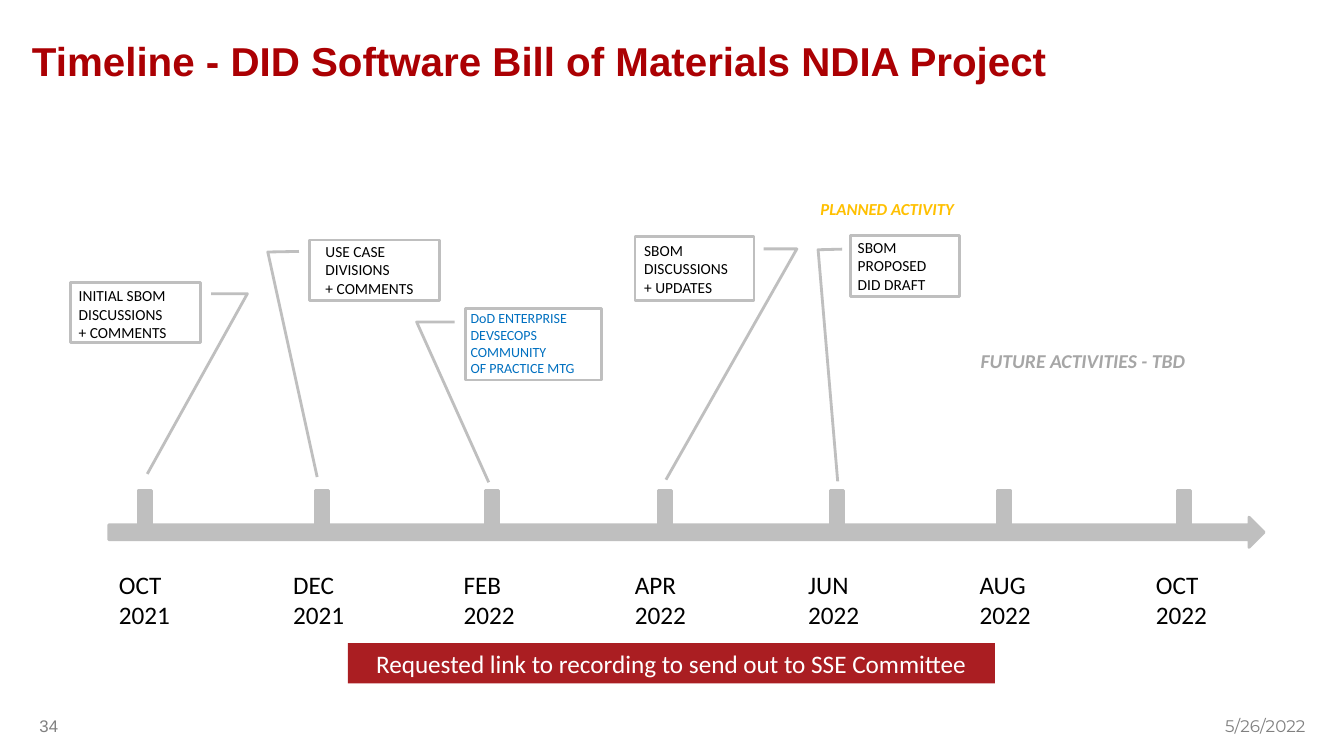
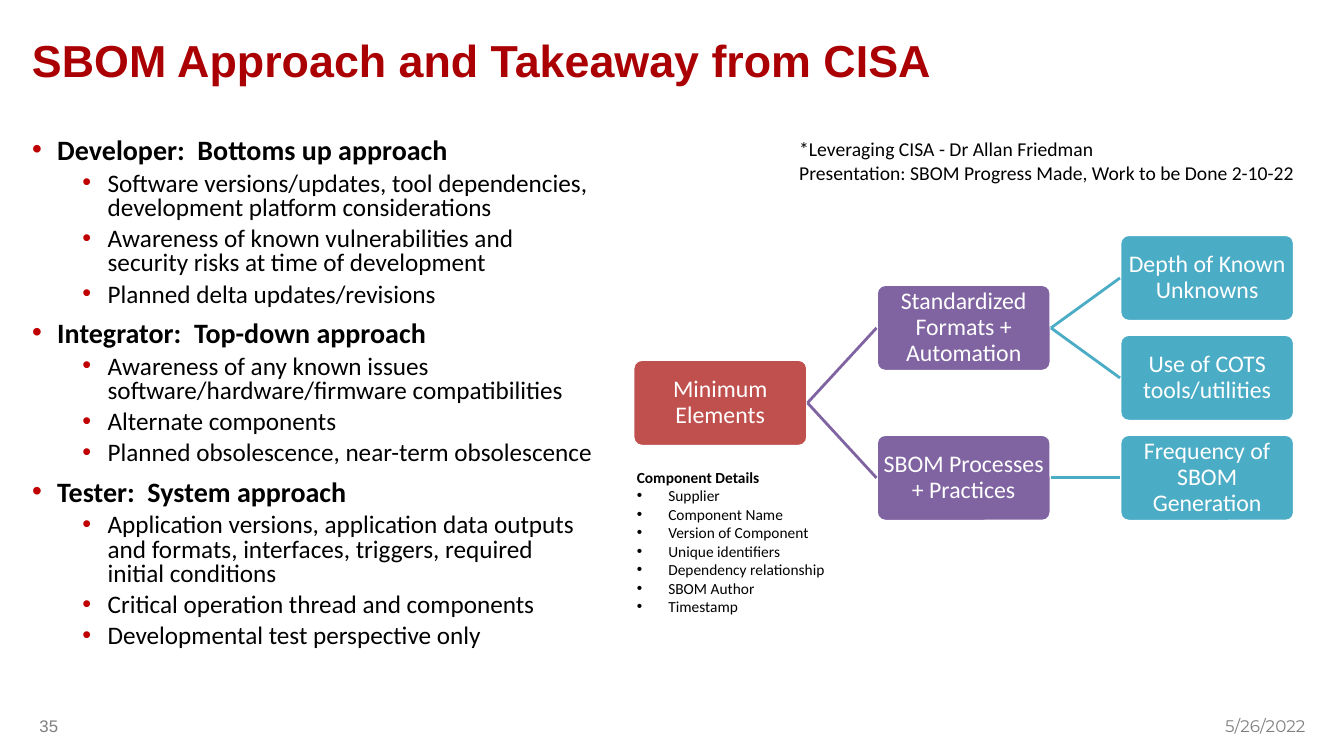
from dataclasses import dataclass, replace

from lxml import etree
from pptx import Presentation
from pptx.dml.color import RGBColor
from pptx.enum.shapes import MSO_CONNECTOR, MSO_SHAPE
from pptx.enum.text import MSO_ANCHOR, PP_ALIGN
from pptx.oxml.ns import qn
from pptx.util import Pt

LEFT, CENTER, RIGHT = PP_ALIGN.LEFT, PP_ALIGN.CENTER, PP_ALIGN.RIGHT
TOP, MIDDLE = MSO_ANCHOR.TOP, MSO_ANCHOR.MIDDLE
RECTANGLE, ROUNDED = MSO_SHAPE.RECTANGLE, MSO_SHAPE.ROUNDED_RECTANGLE
ARROW, CALLOUT = MSO_SHAPE.RIGHT_ARROW, MSO_SHAPE.LINE_CALLOUT_2
STRAIGHT = MSO_CONNECTOR.STRAIGHT

BLACK, WHITE, GRAY = "000000", "FFFFFF", "BFBFBF"
BULLET_RED, RED, PURPLE, TEAL = "C00000", "C0504D", "8064A2", "4BACC6"
DATE = "5/26/2022"
DEFAULT_INSETS = (7.2, 3.6, 7.2, 3.6)


@dataclass(frozen=True)
class Style:
    size: float
    color: str = BLACK
    font: str = "Calibri"
    bold: bool = False
    italic: bool = False


TITLE = Style(32, "AB0003", "Arial", bold=True)
NUMBER = Style(12, "808080", "Arial")
DATE_STYLE = replace(NUMBER, font="Montserrat")
MONTH = Style(18)
BANNER = Style(18, WHITE)
NOTE = Style(11)
COMMUNITY = Style(10, "0070C0")
PLANNED = Style(12, "FFC000", bold=True, italic=True)
FUTURE = Style(14, "A6A6A6", bold=True, italic=True)
HEADING = Style(20, bold=True)
POINT = Style(18)
SOURCE = Style(14)
CARD = Style(17, WHITE)


@dataclass(frozen=True)
class Month:
    name: str
    year: str
    label_left: float
    tick_left: float


@dataclass(frozen=True)
class Callout:
    """A boxed note; leader holds y, x pairs as fractions of the box."""
    lines: list[str]
    box: tuple[float, float, float, float]
    leader: tuple[float, ...]
    inset: tuple[float, float]
    style: Style = NOTE


@dataclass(frozen=True)
class Node:
    text: str
    color: str
    children: tuple["Node", ...] = ()


MONTHS = [
    Month("OCT", "2021", 77.8, 98.6),
    Month("DEC", "2021", 202.3, 225.4),
    Month("FEB", "2022", 324, 347),
    Month("APR", "2022", 446.4, 470.2),
    Month("JUN", "2022", 570.2, 593.3),
    Month("AUG", "2022", 692.6, 712.8),
    Month("OCT", "2022", 818.6, 841),
]

CALLOUTS = [
    Callout(["INITIAL SBOM", "DISCUSSIONS", "+ COMMENTS"], (50.4, 201.6, 92.9, 43.2),
            (0.19, 1.08, 0.19, 1.36, 3.17, 0.59), (5.8, 3)),
    Callout(["USE CASE", "DIVISIONS", "+ COMMENTS"], (221, 171.4, 92.9, 43.2),
            (0.19, -0.08, 0.2, -0.32, 3.92, 0.06), (11.5, 1.5)),
    Callout(["DoD ENTERPRISE", "DEVSECOPS", "COMMUNITY", "OF PRACTICE MTG"],
            (332.6, 220.3, 97.2, 51.1),
            (0.19, -0.08, 0.19, -0.36, 2.43, 0.17), (3.6, 0.7), COMMUNITY),
    Callout(["SBOM", "DISCUSSIONS", "+ UPDATES"], (453.6, 169.2, 85, 45.4),
            (0.19, 1.08, 0.19, 1.36, 3.82, 0.26), (6.5, 3)),
    Callout(["SBOM", "PROPOSED", "DID DRAFT"], (607.7, 168.5, 77.8, 43.2),
            (0.22, -0.08, 0.23, -0.3, 4.06, -0.12), (5, 1.5)),
]

APPROACHES = {
    "Developer:  Bottoms up approach": [
        "Software versions/updates, tool dependencies, development platform considerations",
        "Awareness of known vulnerabilities and security risks at time of development",
        "Planned delta updates/revisions",
    ],
    "Integrator:  Top-down approach": [
        "Awareness of any known issues software/hardware/firmware compatibilities",
        "Alternate components",
        "Planned obsolescence, near-term obsolescence",
    ],
    "Tester:  System approach": [
        "Application versions, application data outputs and formats, interfaces, "
        "triggers, required initial conditions",
        "Critical operation thread and components",
        "Developmental test perspective only",
    ],
}

COMPONENT_DETAILS = [
    "Component Details", "Supplier", "Component Name", "Version of Component",
    "Unique identifiers", "Dependency relationship", "SBOM Author", "Timestamp",
]

ELEMENTS = Node("Minimum Elements", RED, (
    Node("Standardized Formats + Automation", PURPLE, (
        Node("Depth of Known Unknowns", TEAL),
        Node("Use of COTS tools/utilities", TEAL),
    )),
    Node("SBOM Processes + Practices", PURPLE, (
        Node("Frequency of SBOM Generation", TEAL),
    )),
))

CARD_WIDTH, CARD_HEIGHT = 124.6, 61.9
TREE_LEFT, TREE_TOP = 452.2, 167.6
COLUMN_STEP, ROW_STEP = 173.9, 71.4


def rgb(color: str) -> RGBColor:
    return RGBColor.from_string(color)


def format_runs(paragraph, style: Style) -> None:
    for run in paragraph.runs:
        font = run.font
        font.name, font.size = style.font, Pt(style.size)
        font.bold, font.italic = style.bold, style.italic
        font.color.rgb = rgb(style.color)


def write(shape, lines: list[str], style: Style, align=LEFT, anchor=TOP,
          insets=DEFAULT_INSETS) -> None:
    """Fill a shape with one paragraph per line."""
    frame = shape.text_frame
    frame.text = "\n".join(lines)
    frame.word_wrap = True
    frame.vertical_anchor = anchor
    (frame.margin_left, frame.margin_top,
     frame.margin_right, frame.margin_bottom) = map(Pt, insets)
    for paragraph in frame.paragraphs:
        paragraph.alignment = align
        format_runs(paragraph, style)


def add_text(slide, box: tuple, lines: list[str], style: Style, align=LEFT, anchor=TOP):
    shape = slide.shapes.add_textbox(*map(Pt, box))
    write(shape, lines, style, align, anchor)
    return shape


def add_shape(slide, kind, box: tuple, fill: str | None, line: str | None = None):
    shape = slide.shapes.add_shape(kind, *map(Pt, box))
    shape.shadow.inherit = False
    if fill:
        shape.fill.solid()
        shape.fill.fore_color.rgb = rgb(fill)
    else:
        shape.fill.background()
    if line:
        shape.line.color.rgb = rgb(line)
        shape.line.width = Pt(2)
    else:
        shape.line.fill.background()
    return shape


def add_bullet(paragraph, left: float, hanging: float, color: str) -> None:
    properties = paragraph._p.get_or_add_pPr()
    properties.set("marL", str(Pt(left)))
    properties.set("indent", str(-Pt(hanging)))
    bullet_color = etree.SubElement(properties, qn("a:buClr"))
    etree.SubElement(bullet_color, qn("a:srgbClr"), val=color)
    etree.SubElement(properties, qn("a:buFont"), typeface="Arial")
    etree.SubElement(properties, qn("a:buChar"), char="•")


def add_slide(presentation, title: str, number: int, title_style: Style = TITLE):
    """Add a blank slide with the shared title, date and number."""
    slide = presentation.slides.add_slide(presentation.slide_layouts[6])
    add_text(slide, (15.8, 13.7, 792, 58.3), [title], title_style, anchor=MIDDLE)
    add_text(slide, (688.3, 504, 251.3, 28.8), [DATE], DATE_STYLE, RIGHT, MIDDLE)
    add_text(slide, (15.8, 504, 38.2, 28.8), [str(number)], NUMBER, CENTER, MIDDLE)
    return slide


def add_callout(slide, callout: Callout) -> None:
    shape = add_shape(slide, CALLOUT, callout.box, None, GRAY)
    for index, value in enumerate(callout.leader):
        shape.adjustments[index] = value
    left, top = callout.inset
    write(shape, callout.lines, callout.style, insets=(left, top, 0, 0))


def connect(slide, parent, child, color: str) -> None:
    connector = slide.shapes.add_connector(STRAIGHT, 0, 0, 0, 0)
    connector.begin_connect(parent, 3)
    connector.end_connect(child, 1)
    connector.line.color.rgb = rgb(color)
    connector.line.width = Pt(2)
    etree.SubElement(connector._element.spPr, qn("a:effectLst"))


def count_leaves(node: Node) -> int:
    return sum(map(count_leaves, node.children)) or 1


def add_tree(slide, node: Node, depth: int = 0, first_row: int = 0):
    """Draw a node centred on its children and return its card."""
    cards, row = [], first_row
    for child in node.children:
        cards.append(add_tree(slide, child, depth + 1, row))
        row += count_leaves(child)
    if cards:
        top = (cards[0].top.pt + cards[-1].top.pt) / 2
    else:
        top = TREE_TOP + first_row * ROW_STEP
    box = (TREE_LEFT + depth * COLUMN_STEP, top, CARD_WIDTH, CARD_HEIGHT)
    card = add_shape(slide, ROUNDED, box, node.color, WHITE)
    card.adjustments[0] = 0.1
    write(card, [node.text], CARD, CENTER, MIDDLE, (2.5, 2.5, 2.5, 2.5))
    card.text_frame.paragraphs[0].line_spacing = 0.9
    for child, child_card in zip(node.children, cards):
        connect(slide, card, child_card, child.color)
    return card


def build_timeline(presentation) -> None:
    slide = add_slide(presentation, "Timeline - DID Software Bill of Materials NDIA Project",
                      34, replace(TITLE, size=28.8))
    banner = add_shape(slide, RECTANGLE, (248.4, 459.4, 462.2, 28.8), "AA1E22")
    write(banner, ["Requested link to recording to send out to SSE Committee"], BANNER, CENTER)
    add_shape(slide, ARROW, (77.8, 369.4, 825.1, 21.6), GRAY, GRAY)
    for month in MONTHS:
        add_shape(slide, RECTANGLE, (month.tick_left, 350.6, 9.4, 33.8), GRAY, GRAY)
        add_text(slide, (month.label_left, 403.2, 59, 51.1), [month.name, month.year], MONTH)
    for callout in CALLOUTS:
        add_callout(slide, callout)
    add_text(slide, (578.9, 138.2, 131, 21.6), ["PLANNED ACTIVITY"], PLANNED)
    add_text(slide, (693.4, 245.5, 194.4, 24.5), ["FUTURE ACTIVITIES - TBD"], FUTURE)


def build_approach(presentation) -> None:
    slide = add_slide(presentation, "SBOM Approach and Takeaway from CISA", 35)
    lines = [line for heading, points in APPROACHES.items() for line in (heading, *points)]
    body = add_text(slide, (15.8, 95.8, 416.2, 380.2), lines, POINT)
    for index, paragraph in enumerate(body.text_frame.paragraphs):
        is_heading = paragraph.text in APPROACHES
        paragraph.level = 0 if is_heading else 1
        paragraph.line_spacing = 0.8
        if index:
            paragraph.space_before = Pt(10 if is_heading else 5)
        add_bullet(paragraph, 18 if is_heading else 54, 18, BULLET_RED)
        if is_heading:
            format_runs(paragraph, HEADING)

    add_text(slide, (563.8, 94.3, 396, 41), [
        "*Leveraging CISA - Dr Allan Friedman",
        "Presentation: SBOM Progress Made, Work to be Done 2-10-22",
    ], SOURCE)
    add_tree(slide, ELEMENTS)
    details = add_text(slide, (447.8, 330.5, 160, 113.8), COMPONENT_DETAILS, NOTE)
    heading, *items = details.text_frame.paragraphs
    format_runs(heading, replace(NOTE, bold=True))
    for item in items:
        add_bullet(item, 22.5, 22.5, BLACK)


def main() -> None:
    presentation = Presentation()
    presentation.slide_width, presentation.slide_height = Pt(960), Pt(540)
    build_timeline(presentation)
    build_approach(presentation)
    presentation.save("out.pptx")


if __name__ == "__main__":
    main()
